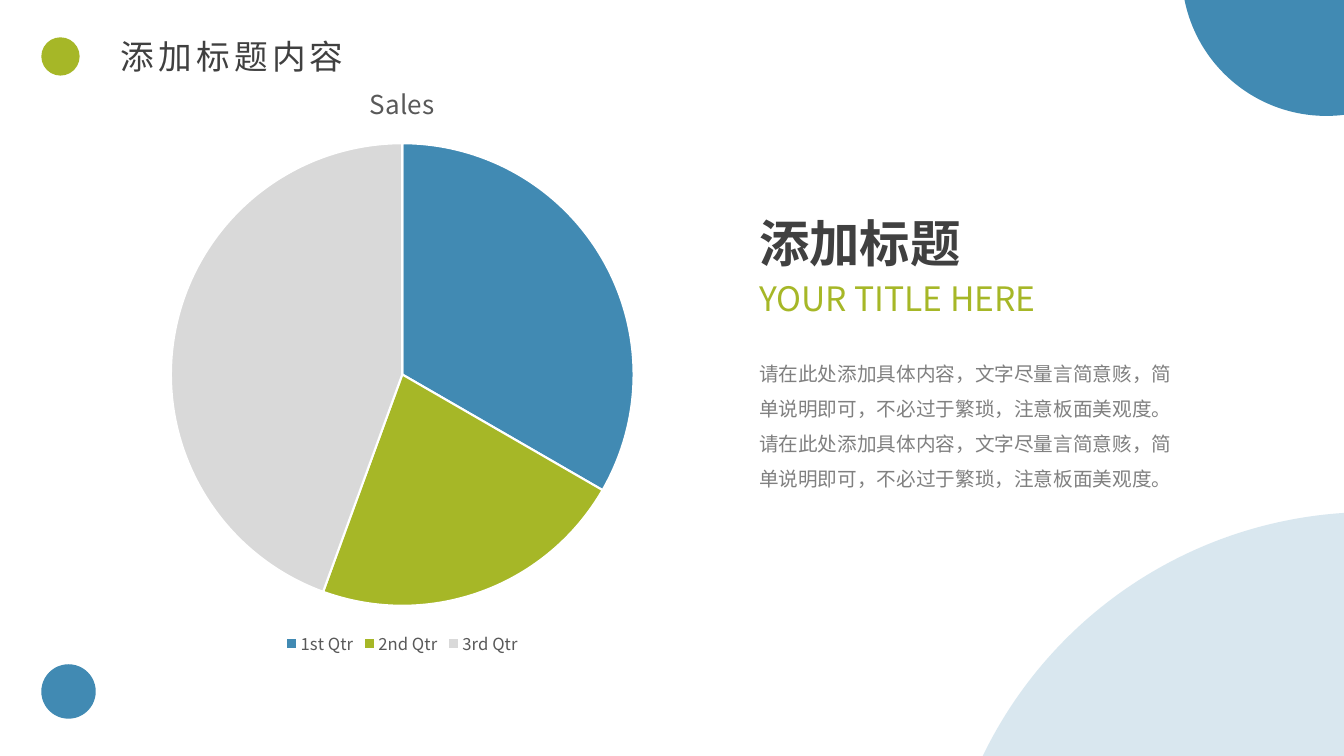
"""Builds a slide with a pie chart of sales beside a short text."""
import pptx
import pptx.chart.data
import pptx.dml.color
import pptx.enum.chart
import pptx.enum.shapes
import pptx.enum.text
import pptx.oxml
import pptx.oxml.ns
import pptx.util

Inches = pptx.util.Inches
Pt = pptx.util.Pt
FONT = "Noto Sans CJK SC"
COLORS = {"blue": "418AB3", "green": "A6B727", "pale": "D9D9D9", "white": "FFFFFF",
          "dark": "404040", "gray": "808080", "label": "595959"}

TITLE = "添加标题内容"
SALES = [("1st Qtr", 33, "blue"), ("2nd Qtr", 22, "green"), ("3rd Qtr", 44, "pale")]
ADVICE = "请在此处添加具体内容，文字尽量言简意赅，简单说明即可，不必过于繁琐，注意板面美观度。"
TEXTS = [
    ("添加标题", (7.43, 2.1, 4.55, 0.6), 36, "dark", True, 0, 1),
    ("YOUR TITLE HERE", (7.43, 2.71, 3.48, 0.52), 24, "green", False, 0.05, 1),
    (ADVICE * 2, (7.43, 3.42, 4.34, 1.5), 14, "gray", False, 0.05, 1.5),
]
DISCS = [
    (9.32, 5.08, 8.57, "blue", 20),
    (11.72, -1.72, 2.87, "blue", 100),
    (0.41, 6.59, 0.54, "blue", 100),
    (0.41, 0.37, 0.38, "green", 100),
]


def tint(name):
    return pptx.dml.color.RGBColor.from_string(COLORS[name])


def style(font, size, color, bold=False, face=FONT):
    font.size, font.bold, font.name = Pt(size), bold, face
    font.color.rgb = tint(color)


def write(frame, text, size, color, bold, face=FONT):
    frame.text = text
    frame.word_wrap = True
    frame.auto_size = pptx.enum.text.MSO_AUTO_SIZE.NONE
    run = frame.paragraphs[0].runs[0]
    style(run.font, size, color, bold, face)
    props = run.font._element
    east = pptx.oxml.parse_xml(f'<a:ea {pptx.oxml.ns.nsdecls("a")} typeface="{FONT}"/>')
    props.find(pptx.oxml.ns.qn("a:latin")).addnext(east)
    return props


def add_disc(slide, left, top, size, color, alpha):
    disc = slide.shapes.add_shape(
        pptx.enum.shapes.MSO_SHAPE.FLOWCHART_CONNECTOR,
        Inches(left), Inches(top), Inches(size), Inches(size))
    disc.shadow.inherit = False
    disc.line.fill.background()
    disc.fill.solid()
    disc.fill.fore_color.rgb = tint(color)
    if alpha < 100:
        shade = disc._element.spPr.find(".//" + pptx.oxml.ns.qn("a:srgbClr"))
        shade.append(pptx.oxml.parse_xml(
            f'<a:alpha {pptx.oxml.ns.nsdecls("a")} val="{alpha * 1000}"/>'))


def add_text(slide, text, place, size, color, bold, pad, spacing):
    frame = slide.shapes.add_textbox(*map(Inches, place)).text_frame
    write(frame, text, size, color, bold)
    frame.margin_top = frame.margin_bottom = Inches(pad)
    frame.paragraphs[0].line_spacing = spacing


def add_pie(slide):
    data = pptx.chart.data.CategoryChartData()
    data.categories = [name for name, _, _ in SALES]
    data.add_series("Sales", [value for _, value, _ in SALES])
    chart = slide.shapes.add_chart(
        pptx.enum.chart.XL_CHART_TYPE.PIE,
        *map(Inches, (0.86, 0.58, 6.26, 5.97)), data).chart
    chart.font.name, chart.font.size = FONT, Pt(10)
    chart.has_title = True
    head = chart.chart_title
    head.include_in_layout = False
    head.text_frame.text = "Sales"
    style(head.text_frame.paragraphs[0].runs[0].font, 18.6, "label")
    chart.has_legend = True
    chart.legend.position = pptx.enum.chart.XL_LEGEND_POSITION.BOTTOM
    chart.legend.include_in_layout = False
    style(chart.legend.font, 11.9, "label")
    for index, (_, _, color) in enumerate(SALES):
        look = chart.plots[0].series[0].points[index].format
        look.fill.solid()
        look.fill.fore_color.rgb = tint(color)
        look.line.color.rgb = tint("white")
        look.line.width = Pt(1.5)


def add_title(slide):
    title = slide.shapes.title
    title.left, title.top, title.width, title.height = map(Inches, (1.1, 0.31, 2.56, 0.5))
    props = write(title.text_frame, TITLE, 24, "dark", False, "Arial")
    props.set("spc", "300")
    title.text_frame.vertical_anchor = pptx.enum.text.MSO_ANCHOR.TOP
    title.text_frame.paragraphs[0].alignment = pptx.enum.text.PP_ALIGN.JUSTIFY


def main():
    deck = pptx.Presentation()
    deck.slide_width, deck.slide_height = Inches(13.33), Inches(7.5)
    slide = deck.slides.add_slide(deck.slide_layouts[5])
    add_title(slide)
    add_pie(slide)
    for text in TEXTS:
        add_text(slide, *text)
    for disc in DISCS:
        add_disc(slide, *disc)
    deck.save("out.pptx")


if __name__ == "__main__":
    main()
